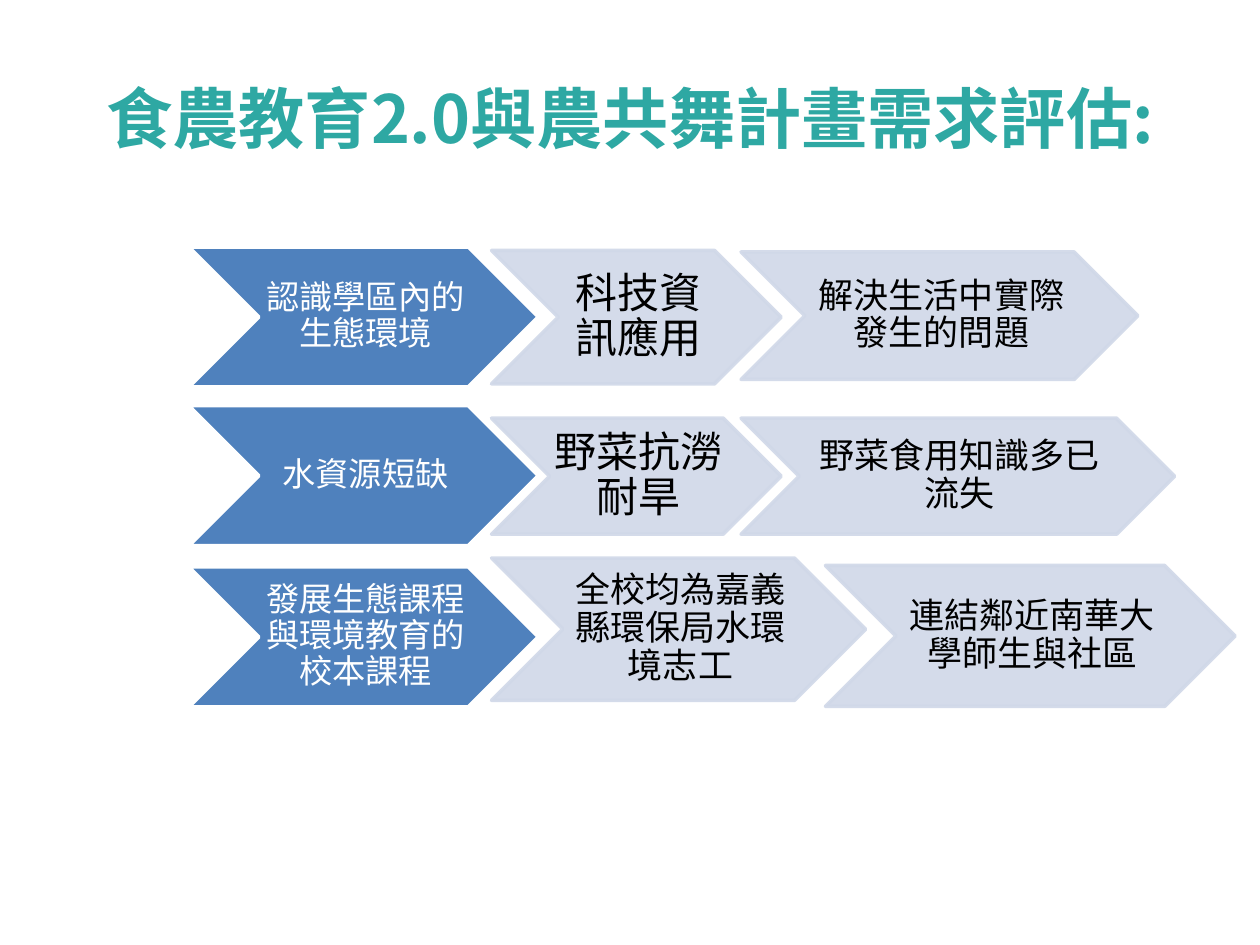
from lxml import etree
from pptx import Presentation
from pptx import util as u
from pptx.dml.color import RGBColor
from pptx.enum import shapes, text
from pptx.oxml.ns import qn

COLORS = {"title": "2EA8A3", "main": "4F81BD", "light": "D0D8E8",
          "white": "FFFFFF", "black": "000000"}
TITLE_FONT, BODY_FONT = "Noto Sans CJK SC", "Calibri"
MAIN_LEFT, MAIN_W, MAIN_H = 3.81, 7.04, 2.82

# Each row: top and text of the main chevron, then its light chevrons
# as (left, top, width, height, size, text), in cm and points
ROWS = [
    (4.98, "認識學區內的生態環境", [
        (9.91, 5.05, 5.84, 2.69, 24, "科技資訊應用"),
        (14.94, 5.08, 8, 2.57, 20, "解決生活中實際發生的問題")]),
    (8.18, "水資源短缺", [
        (9.91, 8.43, 5.84, 2.34, 24, "野菜抗澇耐旱"),
        (14.94, 8.43, 8.74, 2.34, 20, "野菜食用知識多已流失")]),
    (11.43, "發展生態課程與環境教育的校本課程", [
        (9.91, 11.25, 7.54, 2.87, 20, "全校均為嘉義縣環保局水環境志工"),
        (16.64, 11.4, 8.26, 2.84, 20, "連結鄰近南華大學師生與社區")]),
]


def rgb(name):
    return RGBColor.from_string(COLORS[name])


def style(p, size, font, color, bold=False):
    p.alignment = text.PP_ALIGN.CENTER
    p.font.size, p.font.name, p.font.bold = u.Pt(size), font, bold
    p.font.color.rgb = rgb(color)
    # East Asian typeface for the Chinese characters
    etree.SubElement(p._p.pPr.find(qn("a:defRPr")), qn("a:ea"), typeface=font)


def set_alpha(sp, percent):
    for clr in sp._element.spPr.iter(qn("a:srgbClr")):
        etree.SubElement(clr, qn("a:alpha"), val=str(percent * 1000))


def add_title(slide, content):
    sp = slide.shapes.title
    sp.left, sp.top, sp.width, sp.height = (u.Cm(v) for v in (1.27, 0.76, 22.86, 3.18))
    tf = sp.text_frame
    tf.text = content
    tf.auto_size = text.MSO_AUTO_SIZE.NONE
    tf.vertical_anchor = text.MSO_ANCHOR.MIDDLE
    style(tf.paragraphs[0], 37.8, TITLE_FONT, "title", bold=True)


def add_chevron(group, box, content, size, fill, line, color):
    sp = group.shapes.add_shape(shapes.MSO_SHAPE.CHEVRON, *(u.Cm(v) for v in box))
    sp.shadow.inherit = False
    sp.fill.solid()
    sp.fill.fore_color.rgb = rgb(fill)
    sp.line.color.rgb = rgb(line)
    sp.line.width = u.Pt(2)
    tf = sp.text_frame
    tf.word_wrap = True
    tf.vertical_anchor = text.MSO_ANCHOR.MIDDLE
    tf.margin_left, tf.margin_right = u.Cm(0.08), 0
    tf.margin_top = tf.margin_bottom = u.Cm(0.03)
    p = tf.paragraphs[0]
    p.text = content
    p.line_spacing = 0.9
    style(p, size, BODY_FONT, color)
    return sp


def main():
    prs = Presentation()
    prs.slide_width, prs.slide_height = u.Cm(25.4), u.Cm(19.05)
    slide = prs.slides.add_slide(prs.slide_layouts[5])
    add_title(slide, "食農教育2.0與農共舞計畫需求評估:")

    # Chevron rows
    group = slide.shapes.add_group_shape()
    for top, topic, details in ROWS:
        add_chevron(group, (MAIN_LEFT, top, MAIN_W, MAIN_H), topic, 19,
                    "main", "white", "white")
        for *box, size, content in details:
            sp = add_chevron(group, box, content, size, "light", "light", "black")
            set_alpha(sp, 90)

    prs.save("out.pptx")


if __name__ == "__main__":
    main()
